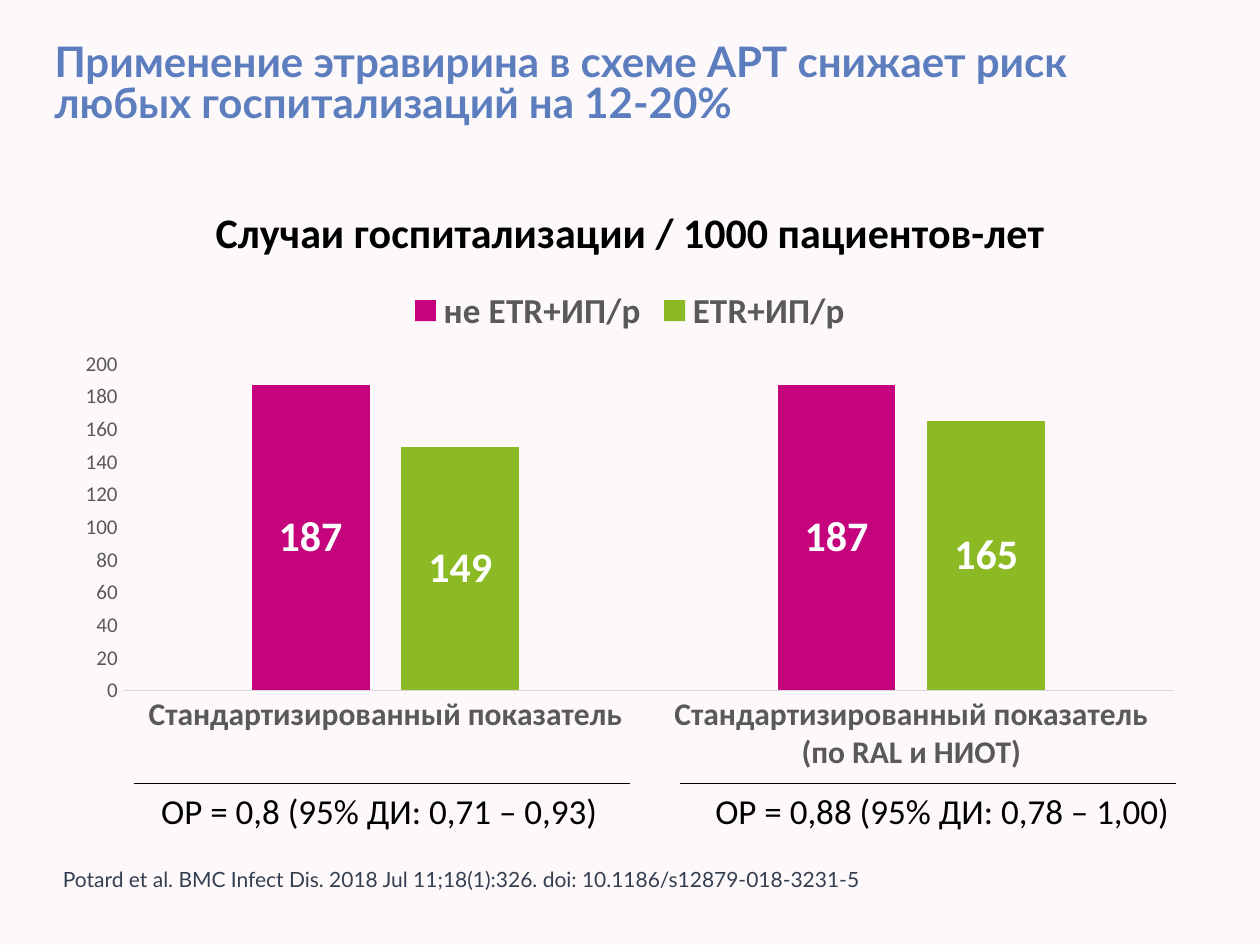
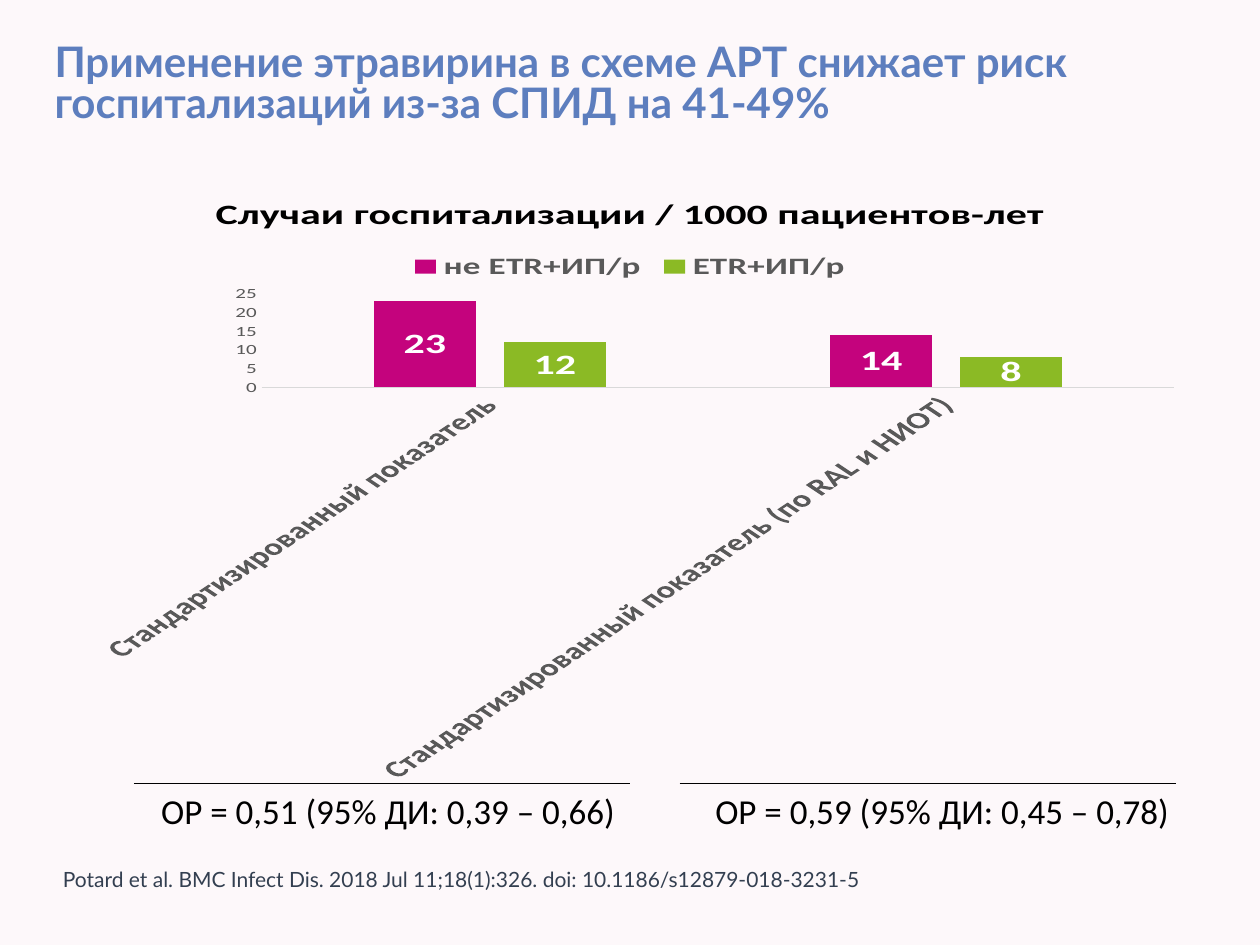
"""Two slides on etravirine and hospitalisation rates, each with a column chart."""
from lxml.etree import SubElement
from pptx import Presentation
from pptx.chart.data import CategoryChartData
from pptx.dml.color import RGBColor
from pptx.enum.chart import XL_CHART_TYPE, XL_LABEL_POSITION, XL_LEGEND_POSITION, XL_TICK_MARK
from pptx.enum.shapes import MSO_CONNECTOR
from pptx.enum.text import MSO_ANCHOR
from pptx.oxml.ns import qn
from pptx.util import Cm, Pt

BACKGROUND = RGBColor(0xFD, 0xF8, 0xFA)
TITLE_BLUE = RGBColor(0x5D, 0x7E, 0xBE)
SOURCE_NAVY = RGBColor(0x33, 0x3F, 0x50)
MAGENTA = RGBColor(0xC4, 0x03, 0x7D)
GREEN = RGBColor(0x8B, 0xBA, 0x25)
GREY = RGBColor(0x59, 0x59, 0x59)
AXIS_GREY = RGBColor(0xD9, 0xD9, 0xD9)
BLACK = RGBColor(0, 0, 0)
WHITE = RGBColor(0xFF, 0xFF, 0xFF)

CHART_TITLE = "Случаи госпитализации / 1000 пациентов-лет"
SOURCE = "Potard et al. BMC Infect Dis. 2018 Jul 11;18(1):326. doi: 10.1186/s12879-018-3231-5"
RATE = "Стандартизированный показатель"
RULE_TOP = Cm(15.8)
RULE_LEFTS = (Cm(2.7), Cm(13.7))
RULE_WIDTH = Cm(10)
RATIO_LEFTS = (Cm(3), Cm(14.17))

STUDIES = [
    {
        "title": "Применение этравирина в схеме АРТ снижает риск любых госпитализаций на 12-20%",
        "categories": (RATE, RATE + "\n(по RAL и НИОТ)"),
        "category_size": 18,
        "without_etr": (187, 187),
        "with_etr": (149, 165),
        "axis": (200, 20),
        "ratios": ("ОР = 0,8 (95% ДИ: 0,71 – 0,93)", "ОР = 0,88 (95% ДИ: 0,78 – 1,00)"),
    },
    {
        "title": "Применение этравирина в схеме АРТ снижает риск госпитализаций из-за СПИД на 41-49%",
        "categories": (RATE, RATE + " (по RAL и НИОТ)"),
        "category_size": 20,
        "without_etr": (23, 14),
        "with_etr": (12, 8),
        "axis": (25, 5),
        "ratios": ("ОР = 0,51 (95% ДИ: 0,39 – 0,66)", "ОР = 0,59 (95% ДИ: 0,45 – 0,78)"),
    },
]


def style_font(font, size, color, bold=False, name="Calibri"):
    font.name = name
    font.size = Pt(size)
    font.bold = bold
    font.color.rgb = color


def add_text(slide, box, text, size, color, bold=False, name="Calibri", inset=None, spacing=None):
    frame = slide.shapes.add_textbox(*box).text_frame
    frame.word_wrap = inset is not None
    if inset is not None:
        frame.margin_left = frame.margin_right = frame.margin_top = frame.margin_bottom = inset
    paragraph = frame.paragraphs[0]
    paragraph.line_spacing = spacing
    run = paragraph.add_run()
    run.text = text
    style_font(run.font, size, color, bold, name)
    return frame


deck = Presentation()
deck.slide_width, deck.slide_height = Cm(25.4), Cm(19.05)

for study in STUDIES:
    slide = deck.slides.add_slide(deck.slide_layouts[6])
    slide.background.fill.solid()
    slide.background.fill.fore_color.rgb = BACKGROUND

    heading = add_text(slide, (Cm(1.1), Cm(0.92), Cm(21.9), Cm(1.62)), study["title"],
                       24, TITLE_BLUE, True, "Lato", 0, 0.8)
    heading.vertical_anchor = MSO_ANCHOR.MIDDLE

    rates = CategoryChartData(number_format="#,##0")
    rates.categories = study["categories"]
    rates.add_series("не ETR+ИП/р", study["without_etr"])
    rates.add_series("ETR+ИП/р", study["with_etr"])
    chart = slide.shapes.add_chart(XL_CHART_TYPE.COLUMN_CLUSTERED, Cm(1.27), Cm(3.58),
                                   Cm(22.86), Cm(12.22), rates).chart
    style_font(chart.font, 10, BLACK)

    chart.has_title = True
    caption = chart.chart_title.text_frame.paragraphs[0].add_run()
    caption.text = CHART_TITLE
    style_font(caption.font, 24, BLACK, True)
    chart.chart_title.include_in_layout = False

    chart.has_legend = True
    chart.legend.position = XL_LEGEND_POSITION.TOP
    chart.legend.include_in_layout = False
    style_font(chart.legend.font, 20, GREY, True)

    category_axis = chart.category_axis
    category_axis.major_tick_mark = XL_TICK_MARK.NONE
    category_axis.format.line.color.rgb = AXIS_GREY
    category_axis.format.line.width = Pt(0.75)
    style_font(category_axis.tick_labels.font, study["category_size"], GREY, True)
    label_body = category_axis._element.find(qn("c:txPr")).find(qn("a:bodyPr"))
    label_body.set("rot", "-60000000")
    label_body.set("vert", "horz")

    value_axis = chart.value_axis
    value_axis.minimum_scale = 0
    value_axis.maximum_scale, value_axis.major_unit = study["axis"]
    value_axis.has_major_gridlines = False
    value_axis.major_tick_mark = XL_TICK_MARK.NONE
    value_axis.format.line.fill.background()
    style_font(value_axis.tick_labels.font, 12, GREY)

    plot = chart.plots[0]
    plot.vary_by_categories = False
    plot.gap_width = 219
    plot.overlap = -27
    for group, color in zip(plot.series, (MAGENTA, GREEN)):
        group.format.fill.solid()
        group.format.fill.fore_color.rgb = color
        labels = group.data_labels
        labels.show_value = True
        labels.number_format = "#,##0"
        labels.number_format_is_linked = False
        labels.position = XL_LABEL_POSITION.CENTER
        style_font(labels.font, 24, WHITE, True)

    add_text(slide, (Cm(1.27), Cm(17.53), Cm(23), Cm(1)), SOURCE,
             12, SOURCE_NAVY, False, "Lato", 0, 0.9)

    for rule_left, ratio_left, ratio in zip(RULE_LEFTS, RATIO_LEFTS, study["ratios"]):
        rule = slide.shapes.add_connector(MSO_CONNECTOR.STRAIGHT, rule_left, RULE_TOP,
                                          rule_left + RULE_WIDTH, RULE_TOP)
        rule.line.color.rgb = BLACK
        rule.line.width = Pt(0.5)
        SubElement(rule._element.spPr, qn("a:effectLst"))
        add_text(slide, (ratio_left, RULE_TOP, Cm(9.8), Cm(1.11)), ratio, 20, BLACK)

deck.save("out.pptx")
